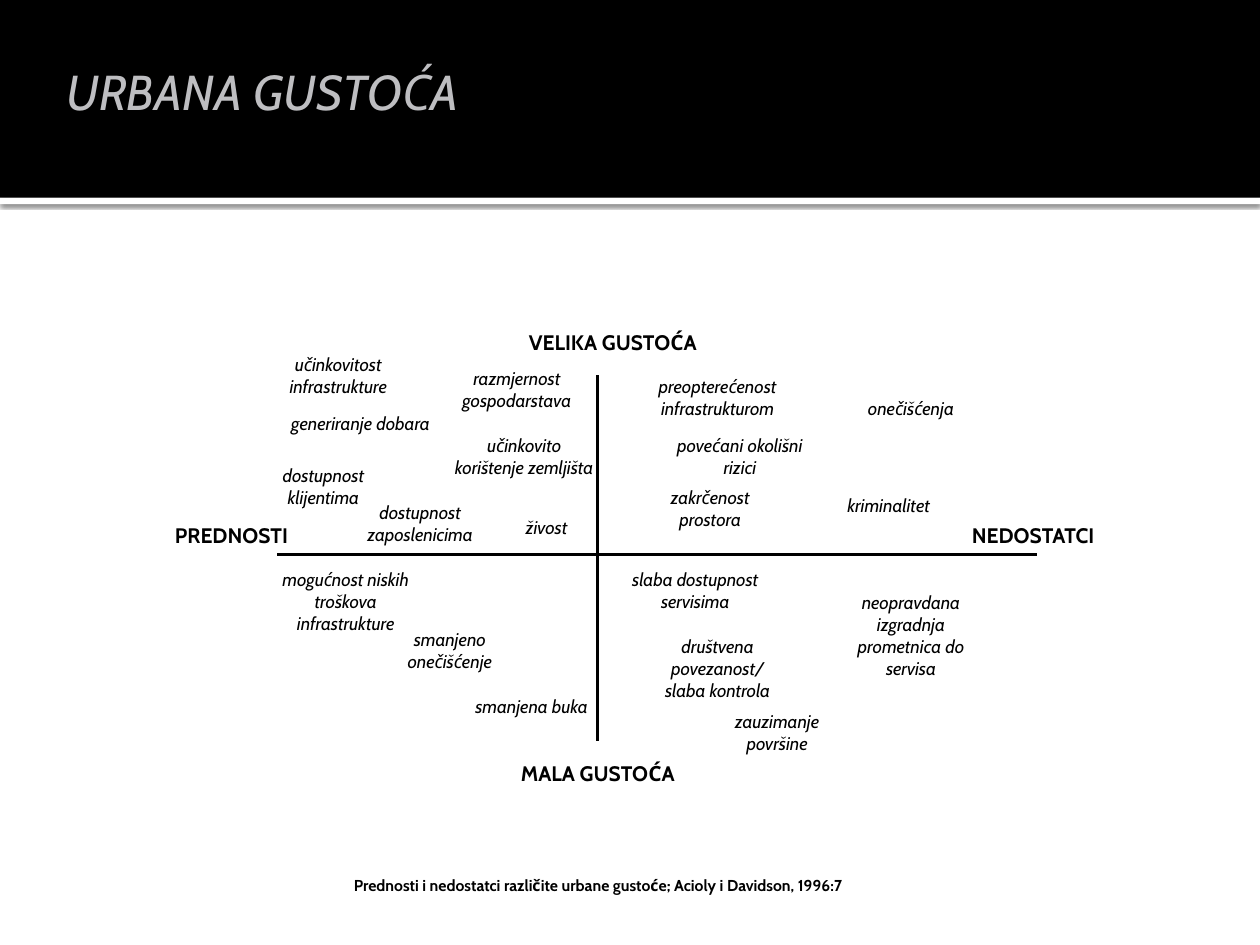
import pptx
import pptx.util
import pptx.dml.color
import pptx.enum.shapes
import pptx.enum.text
import lxml.etree

Inches, Pt = pptx.util.Inches, pptx.util.Pt
Align = pptx.enum.text.PP_ALIGN
rgb = pptx.dml.color.RGBColor.from_string

THEME = {
    "ink": "000000",
    "paper": "FFFFFF",
    "styles": {
        "title": {"name": "Cabin", "size": Pt(28), "bold": False, "italic": True, "color": "BEBEC1"},
        "pole": {"name": "Cabin", "size": Pt(12), "bold": True, "italic": False, "color": "000000"},
        "factor": {"name": "Cabin", "size": Pt(10.5), "bold": False, "italic": True, "color": "000000"},
        "source": {"name": "Cabin", "size": Pt(9), "bold": True, "italic": False, "color": "000000"},
    },
}

WIDTH, HEIGHT = 10, 7.5
MODULE = Pt(4.25) / Inches(1)
GRID_LEFT, GRID_TOP = 2.03, 2.75
FACTOR_WIDTH = 1.31
LINE_HEIGHT, PADDING = 0.18, 0.1

BANDS = [
    ((0, 1.57, WIDTH, 0.05), THEME["paper"], True),
    ((0, 0, WIDTH, 1.57), THEME["ink"], False),
]

AXES = [(4.74, 2.98, 4.74, 5.88), (2.2, 4.4, 8.23, 4.4)]

CAPTIONS = [
    ("URBANA GUSTOĆA", "title", Align.LEFT, (0.43, 0.44, 9.57, 0.57)),
    ("VELIKA GUSTOĆA", "pole", Align.CENTER, (3.98, 2.57, 1.77, 0.3)),
    ("MALA GUSTOĆA", "pole", Align.CENTER, (3.74, 5.99, 2.01, 0.3)),
    ("PREDNOSTI", "pole", Align.LEFT, (1.29, 4.1, 1.2, 0.3)),
    ("NEDOSTATCI", "pole", Align.CENTER, (7.6, 4.1, 1.2, 0.3)),
    ("Prednosti i nedostatci različite urbane gustoće; Acioly i Davidson, 1996:7",
     "source", Align.LEFT, (2.71, 6.9, 4.72, 0.25)),
]

FACTORS = [
    ("učinkovitost infrastrukture", 0, 0, 2),
    ("razmjernost gospodarstava", 24, 2, 2),
    ("generiranje dobara", 3, 8, 2),
    ("učinkovito korištenje zemljišta", 25, 11, 3),
    ("dostupnost klijentima", -2, 15, 2),
    ("dostupnost zaposlenicima", 11, 20, 2),
    ("živost", 28, 22, 1),
    ("mogućnost niskih troškova infrastrukture", 1, 29, 3),
    ("smanjeno onečišćenje", 15, 37, 2),
    ("smanjena buka", 26, 46, 1),
    ("preopterećenost infrastrukturom", 51, 3, 2),
    ("onečišćenja", 77, 6, 1),
    ("povećani okolišni rizici", 54, 11, 2),
    ("zakrčenost prostora", 50, 18, 2),
    ("kriminalitet", 74, 19, 1),
    ("slaba dostupnost servisima", 48, 29, 3),
    ("neopravdana izgradnja prometnica do servisa", 77, 32, 4),
    ("društvena povezanost/\nslaba kontrola", 51, 38, 3),
    ("zauzimanje površine", 59, 48, 2),
]


def add_effects(part, shadowed):
    effects = lxml.etree.SubElement(part._element.spPr, pptx.oxml.ns.qn("a:effectLst"))
    if shadowed:
        shadow = lxml.etree.SubElement(
            effects, pptx.oxml.ns.qn("a:outerShdw"),
            blurRad=str(Pt(2.5)), dist=str(Pt(0.8)), dir="5400000", rotWithShape="0")
        black = lxml.etree.SubElement(shadow, pptx.oxml.ns.qn("a:srgbClr"), val=THEME["ink"])
        lxml.etree.SubElement(black, pptx.oxml.ns.qn("a:alpha"), val="60000")


def add_band(slide, place, color, shadowed):
    band = slide.shapes.add_shape(
        pptx.enum.shapes.MSO_SHAPE.RECTANGLE, *map(Inches, place))
    band.fill.solid()
    band.fill.fore_color.rgb = rgb(color)
    band.line.fill.background()
    if shadowed:
        add_effects(band, True)
    else:
        band.shadow.inherit = False


def add_axis(slide, ends):
    axis = slide.shapes.add_connector(
        pptx.enum.shapes.MSO_CONNECTOR.STRAIGHT, *map(Inches, ends))
    axis.line.color.rgb = rgb(THEME["ink"])
    axis.line.width = Pt(1.5)
    add_effects(axis, False)


def add_caption(slide, wording, style, align, place):
    frame = slide.shapes.add_textbox(*map(Inches, place)).text_frame
    frame.word_wrap = True
    frame.auto_size = pptx.enum.text.MSO_AUTO_SIZE.SHAPE_TO_FIT_TEXT
    frame.text = wording
    for paragraph in frame.paragraphs:
        paragraph.alignment = align
        for run in paragraph.runs:
            for key, value in THEME["styles"][style].items():
                if key == "color":
                    run.font.color.rgb = rgb(value)
                else:
                    setattr(run.font, key, value)


def main():
    deck = pptx.Presentation()
    deck.slide_width, deck.slide_height = Inches(WIDTH), Inches(HEIGHT)
    slide = deck.slides.add_slide(deck.slide_layouts[6])
    for band in BANDS:
        add_band(slide, *band)
    for ends in AXES:
        add_axis(slide, ends)
    for caption in CAPTIONS:
        add_caption(slide, *caption)
    for wording, column, row, lines in FACTORS:
        place = (GRID_LEFT + column * MODULE, GRID_TOP + row * MODULE,
                 FACTOR_WIDTH, PADDING + lines * LINE_HEIGHT)
        add_caption(slide, wording, "factor", Align.CENTER, place)
    deck.save("out.pptx")


if __name__ == "__main__":
    main()
